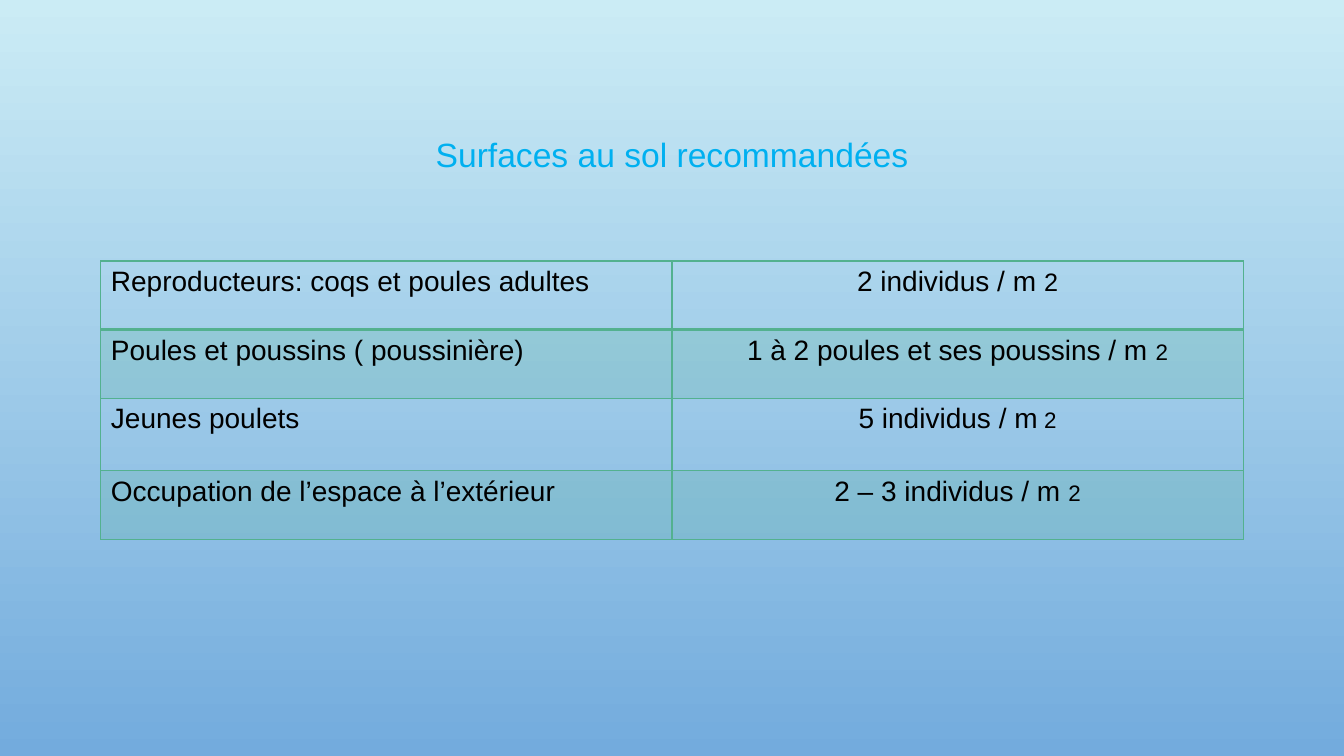
from lxml.etree import SubElement
from pptx import Presentation
from pptx.dml.color import RGBColor
from pptx.enum.text import MSO_ANCHOR, PP_ALIGN
from pptx.oxml import parse_xml
from pptx.oxml.ns import nsdecls, qn
from pptx.util import Inches, Pt

TITLE = "Surfaces au sol recommandées"
ROWS = [
    ("Reproducteurs: coqs et poules adultes", "2 individus / m ", "2", 18),
    ("Poules et poussins ( poussinière)", "1 à 2 poules et ses poussins / m ", "2", 16),
    ("Jeunes poulets", "5 individus / m", " 2", 16),
    ("Occupation de l’espace à l’extérieur", "2 – 3 individus / m ", "2", 16),
]
ROW_HEIGHTS = [0.68, 0.68, 0.72, 0.68]
COLORS = {"sky": "CBECF5", "sea": "73ABDD", "title": "00B0F0",
          "text": "000000", "green": "53B18F"}
FONT = "Arial"
WIDTH, HEIGHT = 13.33, 7.5
MARGIN = 1
CONTENT_WIDTH = WIDTH - 2 * MARGIN


def rgb(name):
    return RGBColor.from_string(COLORS[name])


def add_span(para, text, size, color):
    span = para.add_run()
    span.text = text
    span.font.name = FONT
    span.font.size = Pt(size)
    span.font.color.rgb = rgb(color)


def format_cell(cell, row):
    props = cell._tc.get_or_add_tcPr()
    if row % 2:
        cell.fill.solid()
        cell.fill.fore_color.rgb = rgb("green")
        SubElement(props.find(".//" + qn("a:srgbClr")), qn("a:alpha"), val="20000")
    else:
        cell.fill.background()
    weights = {"lnL": 1, "lnR": 1, "lnT": 2 if row == 1 else 1,
               "lnB": 2 if row == 0 else 1}
    for position, (side, weight) in enumerate(weights.items()):
        props.insert(position, parse_xml(
            f'<a:{side} {nsdecls("a")} w="{Pt(weight)}"><a:solidFill>'
            f'<a:srgbClr val="{COLORS["green"]}"/></a:solidFill></a:{side}>'))


deck = Presentation()
deck.slide_width, deck.slide_height = Inches(WIDTH), Inches(HEIGHT)
page = deck.slides.add_slide(deck.slide_layouts[5])

backdrop = page.background.fill
backdrop.gradient()
backdrop.gradient_angle = 270
for stop, color, position in zip(backdrop.gradient_stops, ("sky", "sea"), (0, 1)):
    stop.color.rgb = rgb(color)
    stop.position = position

title = page.shapes.title
title.left, title.top = Inches(MARGIN), Inches(0.68)
title.width, title.height = Inches(CONTENT_WIDTH), Inches(1.75)
title.text_frame.vertical_anchor = MSO_ANCHOR.MIDDLE
heading = title.text_frame.paragraphs[0]
heading.alignment = PP_ALIGN.CENTER
heading.line_spacing = 0.9
add_span(heading, TITLE, 24, "title")

table = page.shapes.add_table(
    len(ROWS), 2, Inches(MARGIN), Inches(2.59),
    Inches(CONTENT_WIDTH), Inches(sum(ROW_HEIGHTS))).table
table.first_row = table.horz_banding = False
for row, (animals, density, exponent, exponent_size) in enumerate(ROWS):
    table.rows[row].height = Inches(ROW_HEIGHTS[row])
    label, value = table.cell(row, 0), table.cell(row, 1)
    add_span(label.text_frame.paragraphs[0], animals, 20, "text")
    para = value.text_frame.paragraphs[0]
    para.alignment = PP_ALIGN.CENTER
    add_span(para, density, 20, "text")
    add_span(para, exponent, exponent_size, "text")
    for cell in (label, value):
        format_cell(cell, row)

deck.save("out.pptx")
